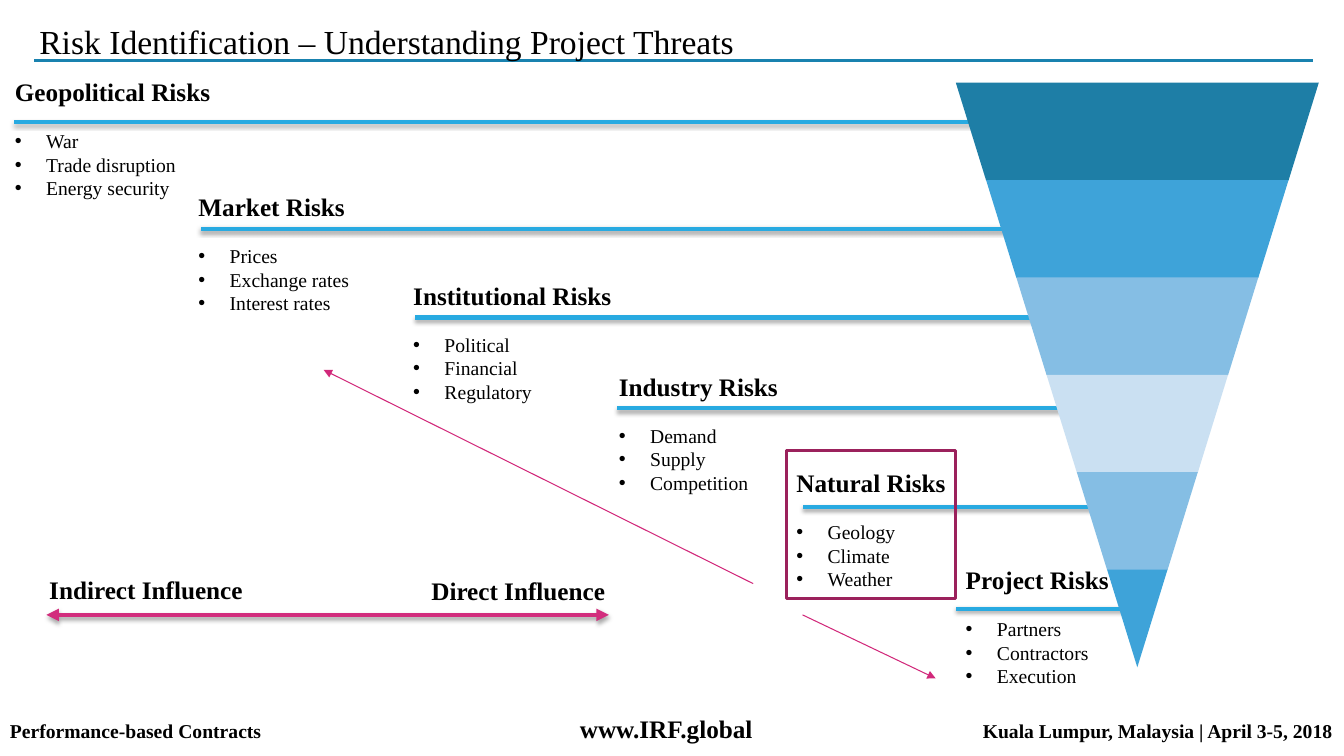
from lxml import etree
from pptx import Presentation
from pptx.dml.color import RGBColor
from pptx.enum.shapes import MSO_CONNECTOR, MSO_SHAPE
from pptx.oxml.ns import qn
from pptx.util import Inches, Pt

STRAIGHT = MSO_CONNECTOR.STRAIGHT
TRAPEZOID, RECTANGLE = MSO_SHAPE.TRAPEZOID, MSO_SHAPE.RECTANGLE
WIDTH, HEIGHT = Inches(13.33), Inches(7.5)
COLUMNS, ROWS = 133.3, 75
INDENT = Inches(0.31)


def colour(value):
    return RGBColor.from_string(value)


def add_xml(parent, tag, **attributes):
    names = {key: str(value) for key, value in attributes.items()}
    return etree.SubElement(parent, qn(tag), names)


class RiskSlide:
    """Draws elements at column and row positions in one shared style."""

    font = "Times New Roman"
    ink = "000000"

    def __init__(self, slide):
        self.shapes = slide.shapes

    def x(self, columns):
        return round(WIDTH * columns / COLUMNS)

    def y(self, rows):
        return round(HEIGHT * rows / ROWS)

    def area(self, left, top, width, height):
        return self.x(left), self.y(top), self.x(width), self.y(height)

    def line(self, start, end, hue, weight, ends=(), shadow=False):
        line = self.shapes.add_connector(
            STRAIGHT, self.x(start[0]), self.y(start[1]), self.x(end[0]), self.y(end[1]))
        line.line.color.rgb = colour(hue)
        line.line.width = Pt(weight)
        properties = line._element.spPr
        for end_tag in ends:
            add_xml(properties.find(qn("a:ln")), end_tag, type="triangle")
        effects = add_xml(properties, "a:effectLst")
        if shadow:
            cast = add_xml(effects, "a:outerShdw", blurRad=Pt(3.1), dist=Pt(1.8),
                           dir=90 * 60000, rotWithShape=0)
            black = add_xml(cast, "a:srgbClr", val="000000")
            add_xml(black, "a:alpha", val=35000)

    def text_box(self, left, top, width, height):
        box = self.shapes.add_textbox(*self.area(left, top, width, height))
        box.text_frame.word_wrap = True
        return box.text_frame

    def format(self, span, size, bold=False):
        span.font.name = self.font
        span.font.size = Pt(size)
        span.font.bold = bold
        span.font.color.rgb = colour(self.ink)

    def label(self, text, left, top, width, height, size=18, bold=True):
        frame = self.text_box(left, top, width, height)
        frame.text = text
        self.format(frame.paragraphs[0].runs[0], size, bold)
        return frame

    def bullet(self, frame, text, gap):
        para = frame.add_paragraph()
        para.text = text
        para.space_before = Pt(gap)
        properties = para._p.get_or_add_pPr()
        properties.set("marL", str(INDENT))
        properties.set("indent", str(-INDENT))
        add_xml(properties, "a:buFont", typeface="Arial")
        add_xml(properties, "a:buChar", char="•")
        self.format(para.runs[0], 14)

    def risk(self, heading, items, left, top, width, height=13.5):
        frame = self.label(heading, left, top, width, height)
        for index, item in enumerate(items):
            self.bullet(frame, item, 0 if index else 16)

    def title(self, text, left, top, width, height):
        frame = self.label(text, left, top, width, height, size=24, bold=False)
        frame.margin_left = frame.margin_right = 0
        frame.margin_top = frame.margin_bottom = 0

    def footer(self, spans, stops, top, height):
        """One line whose parts are set apart by tab stops."""
        para = self.text_box(0, top, COLUMNS, height).paragraphs[0]
        tabs = add_xml(para._p.get_or_add_pPr(), "a:tabLst")
        for columns, alignment in stops:
            add_xml(tabs, "a:tab", pos=self.x(columns), algn=alignment)
        for text, size in spans:
            span = para.add_run()
            span.text = text
            self.format(span, size, bold=True)

    def band(self, left, top, width, height, slant, hue):
        band = self.shapes.add_shape(TRAPEZOID, *self.area(left, top, width, height))
        band.adjustments[0] = slant / min(width, height)
        band.rotation = 180
        band.shadow.inherit = False
        band.fill.solid()
        band.fill.fore_color.rgb = colour(hue)
        band.line.fill.background()

    def frame(self, left, top, width, height, hue, weight):
        frame = self.shapes.add_shape(RECTANGLE, *self.area(left, top, width, height))
        frame.shadow.inherit = False
        frame.fill.background()
        frame.line.color.rgb = colour(hue)
        frame.line.width = Pt(weight)


# heading, items, text left, text top, text width, rule left, rule right, rule row
RISKS = [
    ("Geopolitical Risks", ["War", "Trade disruption", "Energy security"],
     0.5, 7.1, 23.6, 1.4, 99.2, 12.1),
    ("Market Risks", ["Prices", "Exchange rates", "Interest rates"],
     18.7, 18.5, 24.8, 19.9, 102.8, 22.7),
    ("Institutional Risks", ["Political", "Financial", "Regulatory"],
     40, 27.3, 24.8, 41.2, 105.5, 31.5),
    ("Industry Risks", ["Demand", "Supply", "Competition"],
     60.4, 36.3, 24.3, 61.2, 108.4, 40.5),
    ("Natural Risks", ["Geology", "Climate", "Weather"],
     78, 45.9, 25.2, 79.6, 111.1, 50.3),
    ("Project Risks", ["Partners", "Contractors", "Execution"],
     94.8, 55.5, 23.6, 94.8, 112.9, 60.4),
]
FUNNEL = ["1E7EA6", "3EA3D9", "85BEE4", "CAE0F2", "85BEE4", "3EA3D9"]
FUNNEL_LEFT, FUNNEL_TOP, FUNNEL_WIDTH = 94.8, 8.2, 36
BAND_STEP, BAND_HEIGHT, BAND_SLANT = 9.66, 9.7, 3
BOTH_ENDS = ("a:headEnd", "a:tailEnd")


def main():
    deck = Presentation()
    deck.slide_width, deck.slide_height = WIDTH, HEIGHT
    page = RiskSlide(deck.slides.add_slide(deck.slide_layouts[6]))

    page.line((3.4, 6), (130.2, 6), "1982AF", 1.5)
    page.footer(
        [("Performance-based Contracts\t", 14), ("www.IRF.global", 18), ("\t", 20),
         ("Kuala Lumpur, Malaysia | April 3-5, 2018", 14)],
        [(65.1, "ctr"), (131.2, "r")], 70, 4.4)
    page.title("Risk Identification – Understanding Project Threats", 3.9, 2.1, 82.5, 5.3)

    for *_, rule_left, rule_right, row in RISKS:
        page.line((rule_right, row), (rule_left, row), "28AAE1", 3, shadow=True)
    for index, hue in enumerate(FUNNEL):
        inset = index * BAND_SLANT
        page.band(FUNNEL_LEFT + inset, FUNNEL_TOP + index * BAND_STEP,
                  FUNNEL_WIDTH - 2 * inset, BAND_HEIGHT, BAND_SLANT, hue)
    for heading, items, left, top, width, *_ in RISKS:
        page.risk(heading, items, left, top, width)

    page.line((4.6, 61), (60.4, 61), "D22D7D", 3, BOTH_ENDS, shadow=True)
    page.label("Indirect Influence", 3.9, 56.5, 26.3, 4)
    page.label("Direct Influence", 41.8, 56.6, 25, 4)
    page.frame(78, 44.7, 16.8, 14.7, "9B215C", 2)
    for start, end in [((74.7, 57.9), (32.1, 36.7)), ((79.6, 61), (92.8, 67.3))]:
        page.line(start, end, "D1287A", 0.75, ["a:tailEnd"])

    deck.save("out.pptx")


if __name__ == "__main__":
    main()
